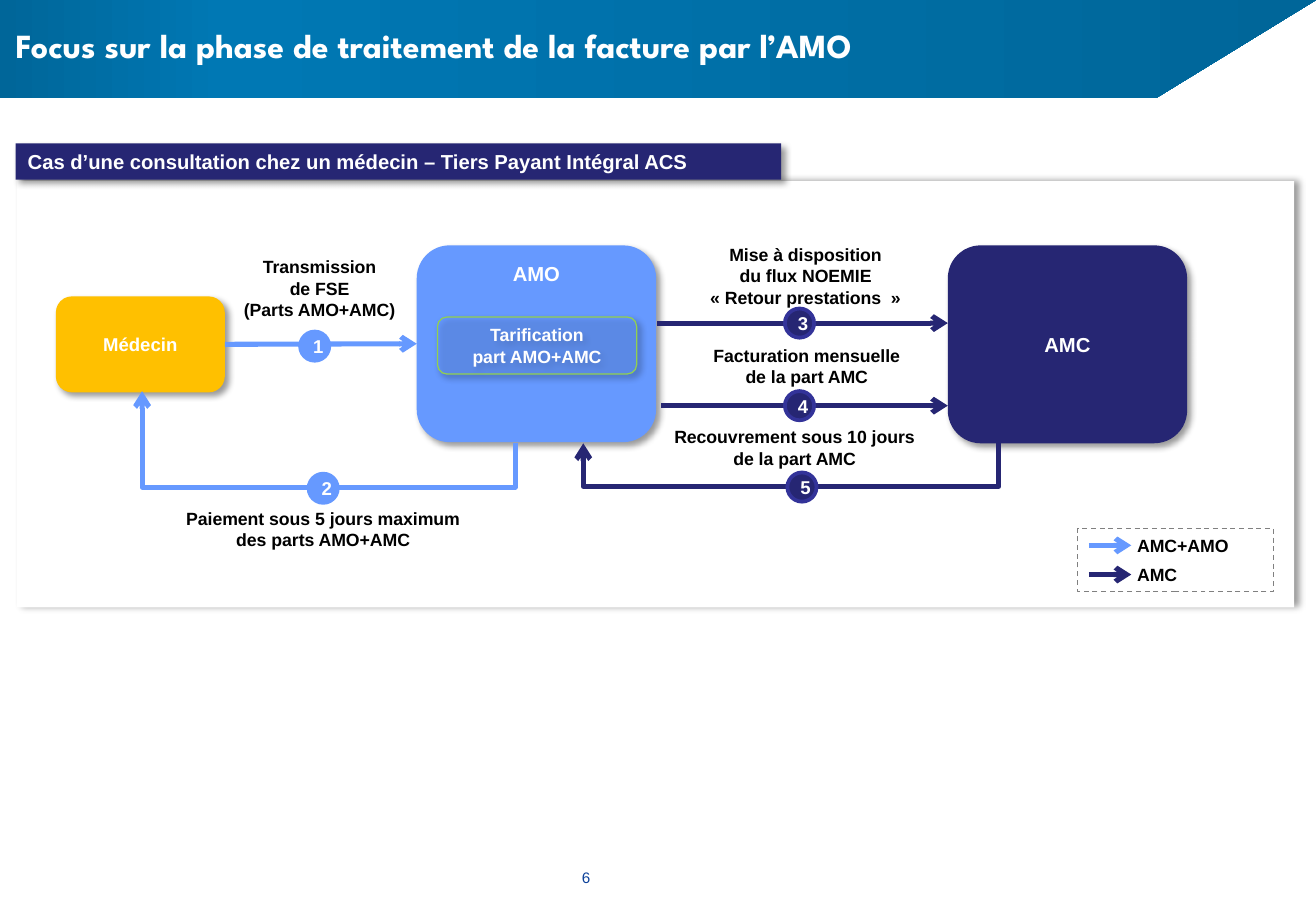
from dataclasses import dataclass
from typing import Optional

from lxml.etree import SubElement
from pptx import Presentation
from pptx.dml.color import RGBColor
from pptx.enum.dml import MSO_LINE_DASH_STYLE as Dash
from pptx.enum.shapes import MSO_CONNECTOR as Link, MSO_SHAPE as Kind
from pptx.enum.text import MSO_ANCHOR as Anchor, PP_ALIGN as Align
from pptx.oxml.ns import qn
from pptx.util import Emu, Inches, Pt

NAVY = RGBColor(0x26, 0x26, 0x73)
INDIGO = RGBColor(0x33, 0x33, 0x99)
SKY = RGBColor(0x66, 0x99, 0xFF)
AMBER = RGBColor(0xFF, 0xC0, 0x00)
GREEN = RGBColor(0x92, 0xD0, 0x50)
GREY = RGBColor(0x80, 0x80, 0x80)
BLACK = RGBColor(0x00, 0x00, 0x00)
WHITE = RGBColor(0xFF, 0xFF, 0xFF)
PAGE_BLUE = RGBColor(0x0C, 0x41, 0x9A)
BANNER_STOPS = ((0, RGBColor(0x00, 0x66, 0x99)), (17, RGBColor(0x00, 0x78, 0xB4)),
                (100, RGBColor(0x00, 0x66, 0x99)))

COLUMNS, ROWS = 108.3, 75
BADGE_SIZE = 2.4
RETURN_ROW = 40.1

deck = Presentation()
deck.slide_width, deck.slide_height = Inches(10.83), Inches(7.5)
page = deck.slides.add_slide(deck.slide_layouts[6])


def col(count: float) -> Emu:
    return Emu(round(deck.slide_width * count / COLUMNS))


def row(count: float) -> Emu:
    return Emu(round(deck.slide_height * count / ROWS))


@dataclass
class Label:
    lines: tuple[str, ...]
    size: float = 10.5
    color: RGBColor = BLACK
    align: Align = Align.CENTER
    anchor: Anchor = Anchor.TOP
    font: str = "Arial"
    bold: bool = True


@dataclass
class Box:
    left: float
    top: float
    width: float
    height: float
    label: Optional[Label] = None
    kind: Optional[Kind] = None
    fill: Optional[RGBColor] = None
    opacity: int = 100
    line: Optional[RGBColor] = None
    weight: float = 0.75
    dash: Optional[Dash] = None
    shadow_angle: Optional[int] = None


@dataclass
class Flow:
    start: tuple[float, float]
    end: tuple[float, float]
    color: RGBColor


@dataclass
class Badge:
    number: int
    column: float
    row: float
    fill: RGBColor
    line: RGBColor


def node_label(*lines: str, size: float = 12, anchor: Anchor = Anchor.MIDDLE) -> Label:
    return Label(lines, size, WHITE, anchor=anchor)


def write(shape, label: Label) -> None:
    frame = shape.text_frame
    frame.word_wrap = True
    frame.vertical_anchor = label.anchor
    for index, line in enumerate(label.lines):
        para = frame.add_paragraph() if index else frame.paragraphs[0]
        para.alignment = label.align
        span = para.add_run()
        span.text = line
        span.font.name, span.font.size = label.font, Pt(label.size)
        span.font.bold, span.font.color.rgb = label.bold, label.color


def add_shadow(shape, angle: int) -> None:
    effects = shape._element.spPr.find(qn("a:effectLst"))
    shadow = SubElement(effects, qn("a:outerShdw"), blurRad=str(Pt(4)), dist=str(Pt(3)),
                        dir=str(angle * 60000), algn="ctr", rotWithShape="0")
    tint = SubElement(shadow, qn("a:srgbClr"), val=str(BLACK))
    SubElement(tint, qn("a:alpha"), val="40000")


def draw_box(box: Box):
    place = col(box.left), row(box.top), col(box.width), row(box.height)
    if box.kind is None:
        shape = page.shapes.add_textbox(*place)
    else:
        shape = page.shapes.add_shape(box.kind, *place)
        shape.shadow.inherit = False
        if box.fill is None:
            shape.fill.background()
        else:
            shape.fill.solid()
            shape.fill.fore_color.rgb = box.fill
        if box.opacity < 100:
            tint = shape._element.spPr.find(qn("a:solidFill"))[0]
            SubElement(tint, qn("a:alpha"), val=str(box.opacity * 1000))
        if box.line is None:
            shape.line.fill.background()
        else:
            shape.line.color.rgb, shape.line.width = box.line, Pt(box.weight)
            shape.line.dash_style = box.dash
        if box.shadow_angle is not None:
            add_shadow(shape, box.shadow_angle)
    if box.label:
        write(shape, box.label)
    return shape


def draw_banner() -> None:
    points = ((108.3, 0), (95.1, 8.1), (0, 8.1))
    builder = page.shapes.build_freeform(0, 0, scale=1.0)
    builder.add_line_segments([(col(x), row(y)) for x, y in points], close=True)
    banner = builder.convert_to_shape()
    banner.shadow.inherit = False
    banner.line.fill.background()
    banner.fill.gradient()
    banner.fill.gradient_angle = 0
    stops = banner._element.spPr.find(qn("a:gradFill")).find(qn("a:gsLst"))
    for stop in list(stops):
        stops.remove(stop)
    for position, color in BANNER_STOPS:
        stop = SubElement(stops, qn("a:gs"), pos=str(position * 1000))
        SubElement(stop, qn("a:srgbClr"), val=str(color))


def draw_link(kind: Link, flow: Flow):
    link = page.shapes.add_connector(kind, col(flow.start[0]), row(flow.start[1]),
                                     col(flow.end[0]), row(flow.end[1]))
    link.line.color.rgb, link.line.width = flow.color, Pt(3)
    SubElement(link.line._get_or_add_ln(), qn("a:tailEnd"), type="arrow")
    SubElement(link._element.spPr, qn("a:effectLst"))
    return link


def draw_return(flow: Flow) -> None:
    (x1, y1), (x2, y2) = flow.start, flow.end
    middle_x, middle_y = (x1 + x2) / 2, (y1 + y2) / 2
    rise, reach = (y2 - y1) / 2, (x1 - x2) / 2
    turned = Flow((middle_x - rise, middle_y - reach), (middle_x + rise, middle_y + reach), flow.color)
    link = draw_link(Link.ELBOW, turned)
    properties = link._element.spPr
    properties.find(qn("a:xfrm")).set("rot", "5400000")
    bend = round((RETURN_ROW - y1) / (y2 - y1) * 100000)
    guides = properties.find(qn("a:prstGeom")).find(qn("a:avLst"))
    SubElement(guides, qn("a:gd"), name="adj1", fmla=f"val {bend}")


def draw_badge(badge: Badge) -> None:
    half = BADGE_SIZE / 2
    draw_box(Box(badge.column - half, badge.row - half, BADGE_SIZE, BADGE_SIZE,
                 node_label(str(badge.number), size=11), Kind.OVAL, badge.fill,
                 line=badge.line, weight=2.25))


FRAMES = (
    Box(46.9, 71, 3.5, 2.5, Label(("6",), 9, PAGE_BLUE, Align.LEFT, bold=False)),
    Box(0.3, 1.5, 96.1, 4.4, Label(("Focus sur la phase de traitement de la facture par l’AMO",),
                                   20, WHITE, Align.LEFT, Anchor.MIDDLE, "League Spartan")),
    Box(1.4, 14.9, 105.1, 35.1, None, Kind.RECTANGLE, WHITE, shadow_angle=0),
    Box(1.3, 11.8, 63, 3, Label(("Cas d’une consultation chez un médecin – Tiers Payant Intégral ACS",),
                                12, WHITE, Align.LEFT), Kind.RECTANGLE, NAVY, shadow_angle=45),
    Box(88.7, 43.5, 16.1, 5.2, None, Kind.RECTANGLE, line=GREY, dash=Dash.DASH),
)
DOCTOR = Box(4.6, 24.4, 13.9, 7.9, node_label("Médecin", size=11), Kind.ROUNDED_RECTANGLE, AMBER, shadow_angle=45)
AMO = Box(34.3, 20.2, 19.7, 16.2, node_label("AMO", anchor=Anchor.TOP), Kind.ROUNDED_RECTANGLE, SKY, shadow_angle=45)
AMC = Box(78, 20.2, 19.7, 16.3, node_label("AMC"), Kind.ROUNDED_RECTANGLE, NAVY, shadow_angle=45)
PRICING = Box(36, 26.1, 16.4, 4.7, node_label("Tarification", "part AMO+AMC", size=10.5),
              Kind.ROUNDED_RECTANGLE, SKY, 47, GREEN, shadow_angle=45)
CAPTIONS = (
    Box(18.9, 20.6, 14.8, 6.3, Label(("Transmission", "de FSE", "(Parts AMO+AMC)"))),
    Box(53.7, 19.6, 25.2, 6.3, Label(("Mise à disposition", "du flux NOEMIE", "« Retour prestations  »"))),
    Box(54.8, 27.9, 23.2, 4.5, Label(("Facturation mensuelle", "de la part AMC"))),
    Box(53.8, 34.6, 23.2, 4.5, Label(("Recouvrement sous 10 jours", "de la part AMC"))),
    Box(13.4, 41.3, 26.4, 4.5, Label(("Paiement sous 5 jours maximum des parts AMO+AMC",))),
)
SENDING = Flow((18.5, 28.3), (34.3, 28.3), SKY)
DELIVERIES = (Flow((54.1, 26.6), (78, 26.6), NAVY), Flow((54.4, 33.4), (78, 33.4), NAVY))
RETURNS = (Flow((42.4, 36.5), (11.7, 32.2), SKY), Flow((82.2, 36.4), (48, 36.5), NAVY))
BADGES = (
    Badge(1, 25.9, 28.5, SKY, SKY),
    Badge(2, 26.6, 40.2, SKY, SKY),
    Badge(3, 65.8, 26.6, NAVY, INDIGO),
    Badge(4, 65.8, 33.4, NAVY, INDIGO),
    Badge(5, 66, 40.1, NAVY, INDIGO),
)
LEGEND = (("AMC+AMO", SKY), ("AMC", NAVY))


def main() -> None:
    draw_banner()
    for frame in FRAMES:
        draw_box(frame)
    doctor, amo, _, _ = [draw_box(node) for node in (DOCTOR, AMO, AMC, PRICING)]
    for caption in CAPTIONS:
        draw_box(caption)
    sending = draw_link(Link.STRAIGHT, SENDING)
    sending.begin_connect(doctor, 3)
    sending.end_connect(amo, 1)
    for delivery in DELIVERIES:
        draw_link(Link.STRAIGHT, delivery)
    for payment in RETURNS:
        draw_return(payment)
    for badge in BADGES:
        draw_badge(badge)
    for index, (name, color) in enumerate(LEGEND):
        level = 44.9 + 2.4 * index
        draw_link(Link.STRAIGHT, Flow((89.6, level), (93.1, level), color))
        draw_box(Box(92.6, level - 1.4, 12.6, 2.9, Label((name,), align=Align.LEFT)))
    deck.save("out.pptx")


if __name__ == "__main__":
    main()
